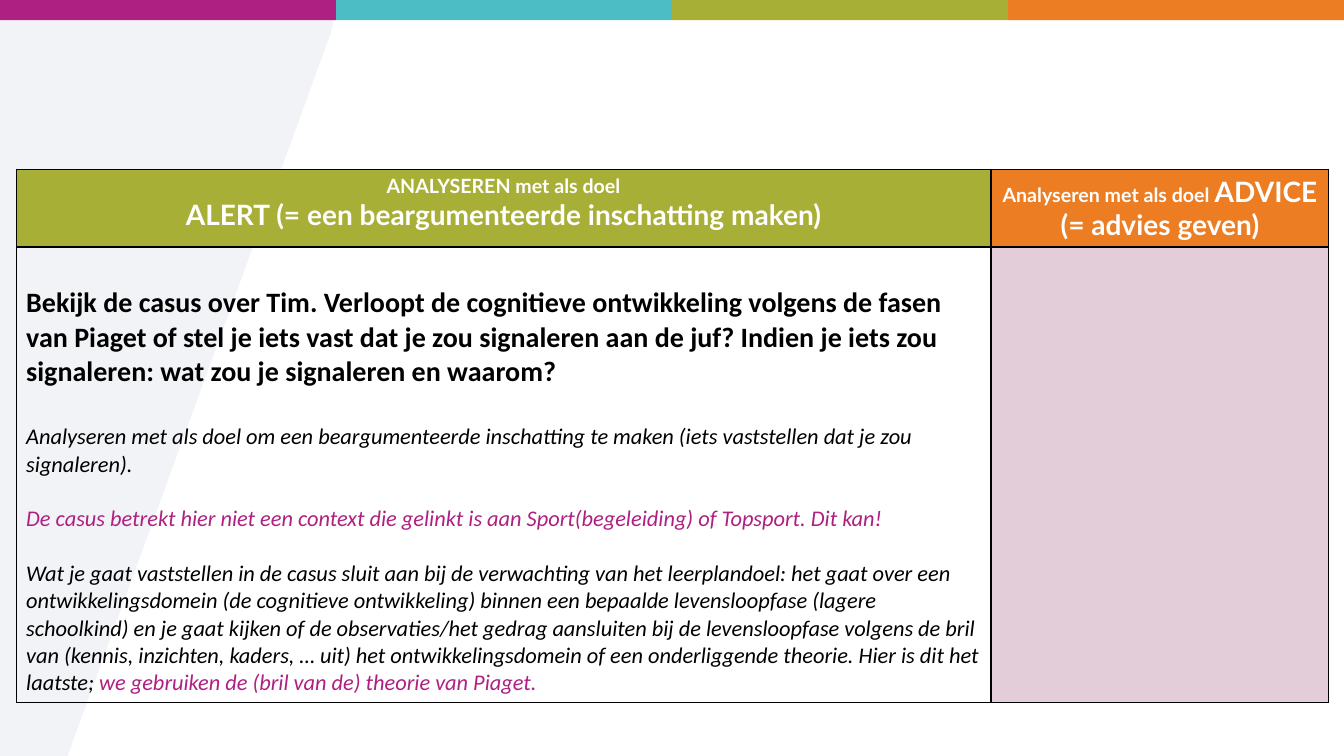
from dataclasses import dataclass

from lxml.etree import SubElement
from pptx import Presentation
from pptx.dml.color import RGBColor
from pptx.enum.shapes import MSO_SHAPE
from pptx.enum.text import PP_ALIGN
from pptx.oxml.ns import qn
from pptx.util import Inches, Pt

COLOURS = {
    "magenta": "AE2081",
    "turquoise": "4CBCC5",
    "olive": "A8AF37",
    "orange": "EC7D23",
    "mist": "E8ECF0",
    "rose": "E3CDD8",
    "white": "FFFFFF",
    "black": "000000",
}
SLIDE_WIDTH, SLIDE_HEIGHT = 13.33, 7.5
STRIPES = ("magenta", "turquoise", "olive", "orange")
WEDGE = ((0, 0.05), (3.09, 0.05), (3.25, 0.08), (3.31, 0.19), (3.28, 0.33), (0.67, 7.5), (0, 7.5))
COLUMN_WIDTHS = (9.67, 3.35)
ROW_HEIGHTS = (0.77, 4.52)


@dataclass(frozen=True)
class Phrase:
    text: str
    size: int
    colour: str = "black"
    font: str = "Calibri"
    bold: bool = False
    italic: bool = False


@dataclass(frozen=True)
class Passage:
    phrases: tuple[Phrase, ...]
    space_before: float = 0


@dataclass(frozen=True)
class Panel:
    row: int
    column: int
    passages: tuple[Passage, ...] = ()
    fill: str | None = None
    align: PP_ALIGN = PP_ALIGN.LEFT
    top_margin: float = 0.05


def heading(text: str, size: int) -> Phrase:
    """Return a bold white phrase for the header row."""
    return Phrase(text, size, "white", "Lato", bold=True)


def remark(text: str, colour: str = "black") -> Phrase:
    """Return an italic explanatory phrase."""
    return Phrase(text, 16, colour, italic=True)


PANELS = (
    Panel(0, 0, (
        Passage((heading("ANALYSEREN met als doel", 14),)),
        Passage((heading("ALERT (= een beargumenteerde inschatting maken)", 20),)),
    ), "olive", PP_ALIGN.CENTER),
    Panel(0, 1, (
        Passage((heading("Analyseren met als doel ", 14), heading("ADVICE (= advies geven)", 20))),
    ), "orange", PP_ALIGN.CENTER),
    Panel(1, 0, (
        Passage((Phrase(
            "Bekijk de casus over Tim. Verloopt de cognitieve ontwikkeling volgens de fasen "
            "van Piaget of stel je iets vast dat je zou signaleren aan de juf? Indien je iets zou "
            "signaleren: wat zou je signaleren en waarom?", 20, bold=True),)),
        Passage((remark(
            "Analyseren met als doel om een beargumenteerde inschatting te maken "
            "(iets vaststellen dat je zou signaleren)."),), 24.4),
        Passage((remark(
            "De casus betrekt hier niet een context die gelinkt is aan Sport(begeleiding) "
            "of Topsport. Dit kan!", "magenta"),), 19.5),
        Passage((
            remark(
                "Wat je gaat vaststellen in de casus sluit aan bij de verwachting van het "
                "leerplandoel: het gaat over een ontwikkelingsdomein (de cognitieve ontwikkeling) "
                "binnen een bepaalde levensloopfase (lagere schoolkind) en je gaat kijken of de "
                "observaties/het gedrag aansluiten bij de levensloopfase volgens de bril van "
                "(kennis, inzichten, kaders, … uit) het ontwikkelingsdomein of een onderliggende "
                "theorie. Hier is dit het laatste; "),
            remark("we gebruiken de (bril van de) theorie van Piaget.", "magenta"),
        ), 19.5),
    ), top_margin=0.39),
    Panel(1, 1, fill="rose"),
)


def rgb(colour: str) -> RGBColor:
    """Look up a named colour."""
    return RGBColor.from_string(COLOURS[colour])


def paint(shape, colour: str) -> None:
    """Give a shape a flat fill without line or shadow."""
    shape.fill.solid()
    shape.fill.fore_color.rgb = rgb(colour)
    shape.line.fill.background()
    shape.shadow.inherit = False


def draw_background(slide) -> None:
    """Draw the pale wedge and the coloured stripes along the top."""
    corners = [(Inches(x), Inches(y)) for x, y in WEDGE]
    builder = slide.shapes.build_freeform(*corners[0])
    builder.add_line_segments(corners[1:], close=True)
    wedge = builder.convert_to_shape()
    paint(wedge, "mist")
    tint = wedge.fill._xPr.find(qn("a:solidFill"))[0]
    SubElement(tint, qn("a:alpha"), val="59000")

    stripe_width = SLIDE_WIDTH / len(STRIPES)
    for index, colour in enumerate(STRIPES):
        stripe = slide.shapes.add_shape(
            MSO_SHAPE.RECTANGLE, Inches(index * stripe_width), 0, Inches(stripe_width), Inches(0.2))
        paint(stripe, colour)


def outline(cell) -> None:
    """Add a thin black border on each side of a cell."""
    properties = cell._tc.get_or_add_tcPr()
    for side in ("a:lnL", "a:lnR", "a:lnT", "a:lnB"):
        border = SubElement(properties, qn(side), w=str(Pt(1)))
        SubElement(SubElement(border, qn("a:solidFill")), qn("a:srgbClr"), val=COLOURS["black"])


def write_panel(cell, panel: Panel) -> None:
    """Fill a cell with its colour and passages."""
    outline(cell)
    if panel.fill:
        cell.fill.solid()
        cell.fill.fore_color.rgb = rgb(panel.fill)
    else:
        cell.fill.background()
    cell.margin_top = Inches(panel.top_margin)
    frame = cell.text_frame
    for index, passage in enumerate(panel.passages):
        paragraph = frame.add_paragraph() if index else frame.paragraphs[0]
        paragraph.alignment = panel.align
        if passage.space_before:
            paragraph.space_before = Pt(passage.space_before)
        for phrase in passage.phrases:
            run = paragraph.add_run()
            run.text = phrase.text
            run.font.name = phrase.font
            run.font.size = Pt(phrase.size)
            run.font.bold = phrase.bold
            run.font.italic = phrase.italic
            run.font.color.rgb = rgb(phrase.colour)


def draw_table(slide) -> None:
    """Draw the comparison of both analysis goals."""
    goals = slide.shapes.add_table(
        len(ROW_HEIGHTS), len(COLUMN_WIDTHS), Inches(0.16), Inches(1.68),
        Inches(sum(COLUMN_WIDTHS)), Inches(sum(ROW_HEIGHTS))).table
    goals.first_row = False
    goals.horz_banding = False
    for column, width in zip(goals.columns, COLUMN_WIDTHS):
        column.width = Inches(width)
    for row, height in zip(goals.rows, ROW_HEIGHTS):
        row.height = Inches(height)
    for panel in PANELS:
        write_panel(goals.cell(panel.row, panel.column), panel)


def main() -> None:
    """Build and save the presentation."""
    presentation = Presentation()
    presentation.slide_width = Inches(SLIDE_WIDTH)
    presentation.slide_height = Inches(SLIDE_HEIGHT)
    slide = presentation.slides.add_slide(presentation.slide_layouts[6])
    draw_background(slide)
    draw_table(slide)
    presentation.save("out.pptx")


if __name__ == "__main__":
    main()
